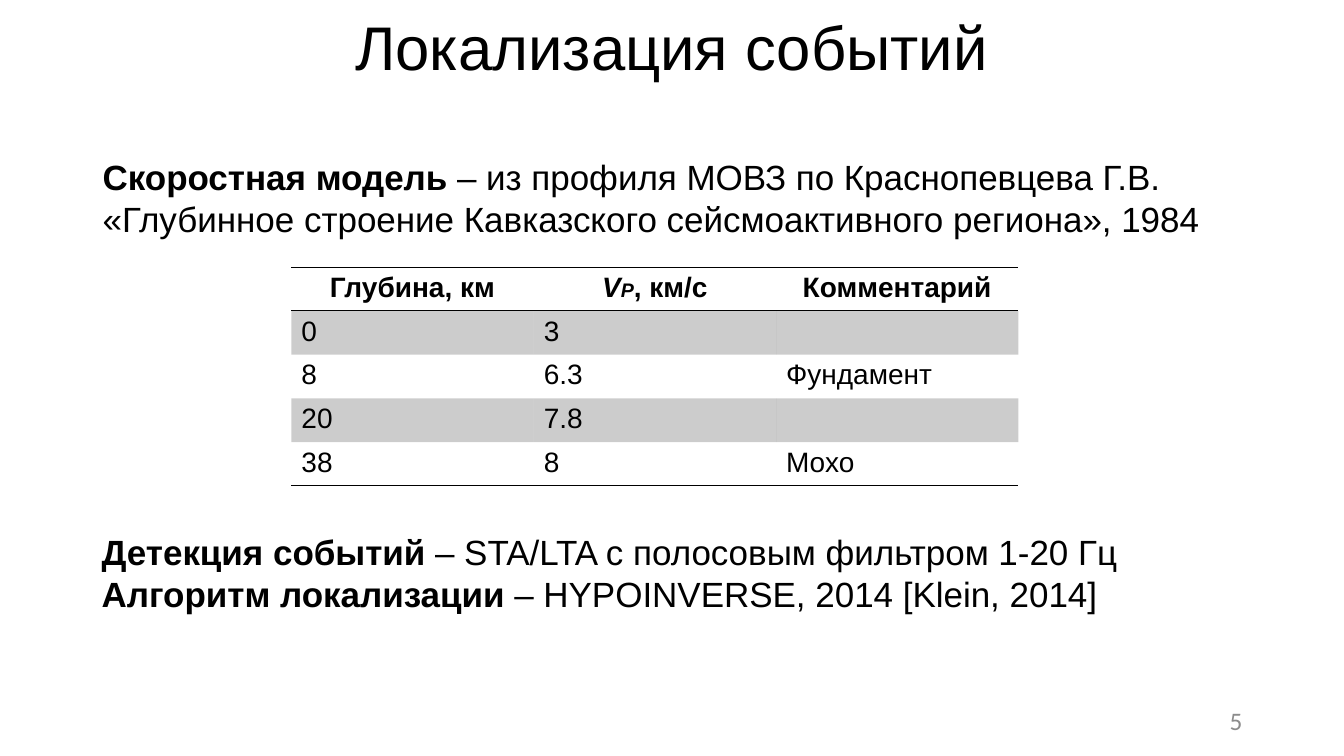
"""Builds the slide on event localization with its velocity model table."""
from lxml.etree import SubElement
from pptx import Presentation
from pptx.dml.color import RGBColor
from pptx.enum.text import MSO_ANCHOR as Anchor, PP_ALIGN as Align
from pptx.oxml import parse_xml
from pptx.oxml.ns import nsdecls, qn
from pptx.util import Inches, Pt

BLACK, GREY = "000000", "8C8C8C"
PLAIN_STYLE = "{2D5ABB26-0587-4C30-8999-92F81FD0307C}"
BOLD = {"bold": True}
ITALIC = {"bold": True, "italic": True}

TITLE = [[("Локализация событий", {})]]
MODEL = [[
    ("Скоростная модель ", BOLD),
    ("– из профиля МОВЗ по Краснопевцева Г.В. «Глубинное строение "
     "Кавказского сейсмоактивного региона», 1984", {}),
]]
METHODS = [
    [("Детекция событий ", BOLD),
     ("– STA/LTA с полосовым фильтром 1-20 Гц", {})],
    [("Алгоритм локализации ", BOLD),
     ("– HYPOINVERSE, 2014 [Klein, 2014]", {})],
]
NUMBER = [[("5", {})]]
HEADS = [
    [("Глубина, км", BOLD)],
    [("V", ITALIC), ("P", {**ITALIC, "size": Pt(14)}), (", км/c", BOLD)],
    [("Комментарий", BOLD)],
]
LAYERS = [
    ("0", "3", ""),
    ("8", "6.3", "Фундамент"),
    ("20", "7.8", ""),
    ("38", "8", "Мохо"),
]
BOXES = [
    (TITLE, (0, 0.12, 13.33, 1.59), 44, {"alignment": Align.CENTER, "line_spacing": 0.9}, {}),
    (MODEL, (0.92, 1.49, 11.52, 0.94), 25, {}, {}),
    (METHODS, (0.91, 5.21, 11.52, 0.94), 25, {}, {}),
    (NUMBER, (9.42, 6.95, 3, 0.4), 18, {"alignment": Align.RIGHT},
     {"name": "Calibri", "color": GREY, "anchor": Anchor.MIDDLE}),
]
TABLE_AT = (2.89, 2.65, 7.21, 2.17)


def paint(target, color):
    target.rgb = RGBColor.from_string(color)


def write(frame, lines, size, layout, name="Arial", color=BLACK, anchor=Anchor.TOP):
    frame.word_wrap = True
    frame.vertical_anchor = anchor
    for i, line in enumerate(lines):
        para = frame.paragraphs[0] if i == 0 else frame.add_paragraph()
        for key, value in layout.items():
            setattr(para, key, value)
        for text, marks in line:
            run = para.add_run()
            run.text = text
            for key, value in {"name": name, "size": Pt(size), "bold": False, **marks}.items():
                setattr(run.font, key, value)
            paint(run.font.color, color)


def shade(cell):
    cell.fill.solid()
    paint(cell.fill.fore_color, BLACK)
    tint = cell._tc.tcPr.find(".//" + qn("a:srgbClr"))
    SubElement(tint, qn("a:alpha"), val="20000")


def rule(cell, sides):
    for i, side in enumerate(sides):
        cell._tc.get_or_add_tcPr().insert(i, parse_xml(
            f'<a:ln{side} {nsdecls("a")} w="12700"><a:solidFill>'
            f'<a:srgbClr val="{BLACK}"/></a:solidFill></a:ln{side}>'))


def draw_table(slide):
    rows = [HEADS] + [[[(text, {})] if text else [] for text in row] for row in LAYERS]
    frame = slide.shapes.add_table(len(rows), len(HEADS), *map(Inches, TABLE_AT))
    table = frame.table
    table.first_row = table.horz_banding = False
    table._tbl.tblPr.find(qn("a:tableStyleId")).text = PLAIN_STYLE
    for r, row in enumerate(rows):
        for c, runs in enumerate(row):
            cell = table.cell(r, c)
            write(cell.text_frame, [runs], 20, {"alignment": Align.LEFT if r else Align.CENTER})
            if r % 2:
                shade(cell)
            else:
                cell.fill.background()
            if r == 0:
                rule(cell, "TB")
            elif r == len(rows) - 1:
                rule(cell, "B")


def main():
    deck = Presentation()
    deck.slide_width, deck.slide_height = Inches(13.33), Inches(7.5)
    slide = deck.slides.add_slide(deck.slide_layouts[6])
    for lines, place, size, layout, look in BOXES:
        box = slide.shapes.add_textbox(*map(Inches, place))
        write(box.text_frame, lines, size, layout, **look)
    draw_table(slide)
    deck.save("out.pptx")


if __name__ == "__main__":
    main()
